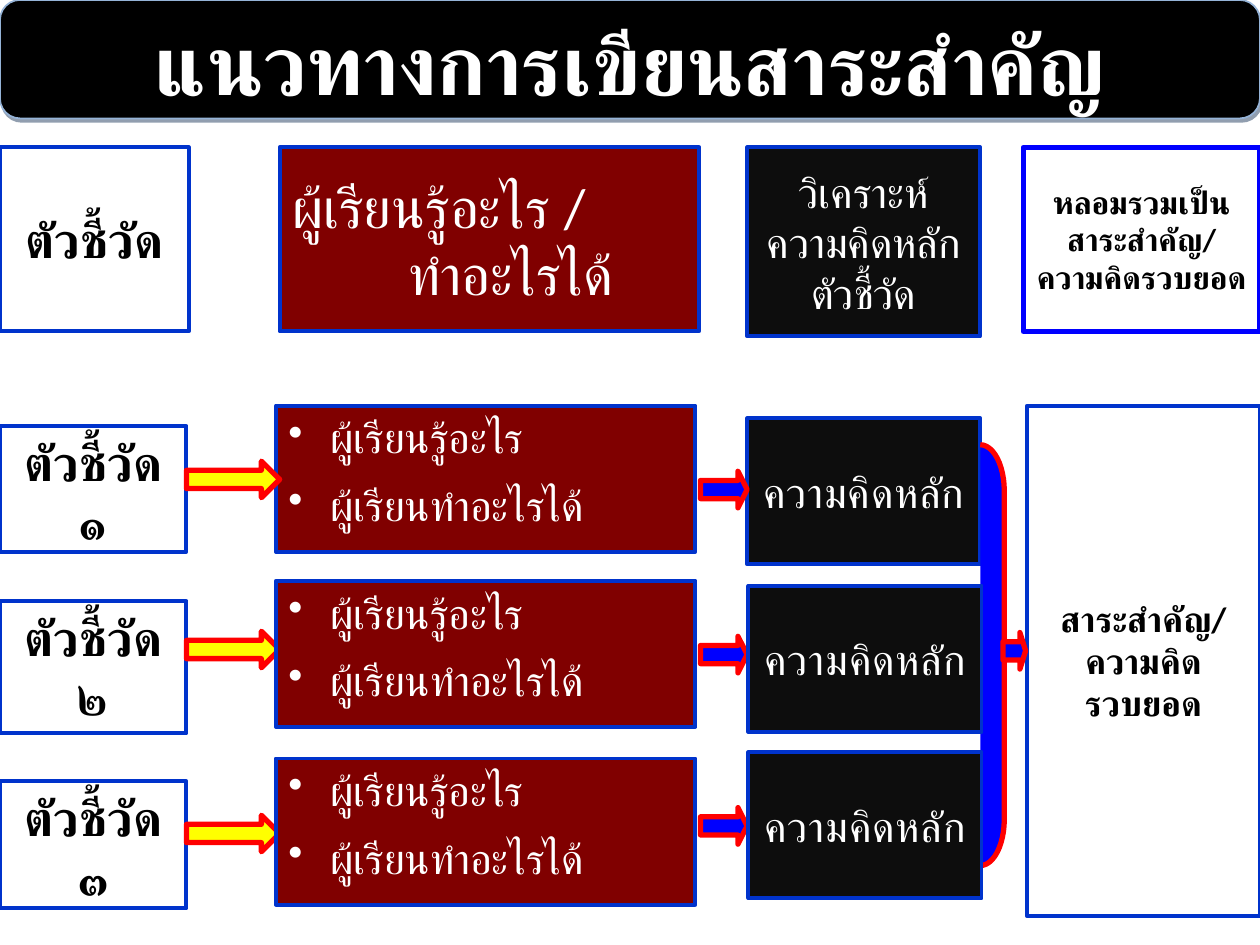
from lxml.etree import SubElement
from pptx import Presentation
from pptx.dml.color import RGBColor
from pptx.enum.shapes import MSO_SHAPE
from pptx.enum.text import MSO_ANCHOR, PP_ALIGN
from pptx.oxml import parse_xml
from pptx.oxml.ns import nsdecls, qn
from pptx.util import Inches, Pt

WHITE = RGBColor(0xFF, 0xFF, 0xFF)
BLACK = RGBColor(0, 0, 0)
DARK = RGBColor(0x0D, 0x0D, 0x0D)
MAROON = RGBColor(0x80, 0, 0)
EDGE = RGBColor(0, 0x33, 0xCC)
BLUE = RGBColor(0, 0, 0xFF)
RED = RGBColor(0xFF, 0, 0)
YELLOW = RGBColor(0xFF, 0xFF, 0)
PALE = RGBColor(0x95, 0xB3, 0xD7)


class Board:
    font = "Calibri"

    def __init__(self, slide):
        self.slide = slide

    def shape(self, kind, at, fill, line=EDGE, width=2.25, adj=()):
        item = self.slide.shapes.add_shape(kind, *map(Inches, at))
        item.shadow.inherit = False
        item.fill.solid()
        item.fill.fore_color.rgb = fill
        item.line.color.rgb = line
        item.line.width = Pt(width)
        for i, value in enumerate(adj):
            item.adjustments[i] = value
        return item

    def text(self, item, lines, size, color, bold=False, top=False,
             align=PP_ALIGN.CENTER, before=0, after=0):
        frame = item.text_frame
        frame.word_wrap = True
        frame.vertical_anchor = MSO_ANCHOR.TOP if top else MSO_ANCHOR.MIDDLE
        for i, line in enumerate(lines):
            para = frame.paragraphs[0] if i == 0 else frame.add_paragraph()
            para.text = line
            para.alignment = align
            para.space_before = Pt(before)
            para.space_after = Pt(after)
            para.font.name = self.font
            para.font.size = Pt(size)
            para.font.bold = bold
            para.font.color.rgb = color
        return frame.paragraphs

    def box(self, at, fill, lines, size, line=EDGE, width=2.25, **style):
        item = self.shape(MSO_SHAPE.RECTANGLE, at, fill, line, width)
        color = BLACK if fill == WHITE else WHITE
        return self.text(item, lines, size, color, **style)

    def indent(self, para, left, bullet=False):
        props = para._p.get_or_add_pPr()
        props.set("marL", str(Inches(left)))
        if bullet:
            props.set("indent", str(-Inches(left)))
            mark = SubElement(props, qn("a:buChar"))
            mark.set("char", "•")
            props.remove(mark)
            props.insert_element_before(mark, "a:tabLst", "a:defRPr", "a:extLst")

    def arrow(self, at, fill, head):
        self.shape(MSO_SHAPE.RIGHT_ARROW, at, fill, RED, 3, (0.5, head))

    def banner(self, text):
        item = self.shape(MSO_SHAPE.ROUNDED_RECTANGLE, (0, 0, 10, 0.94),
                          BLACK, PALE, 1, (0.17,))
        self.text(item, [text], 48, WHITE, bold=True, top=True, after=10)
        glow = item._element.spPr.find(qn("a:effectLst"))
        glow.append(parse_xml(
            f'<a:outerShdw {nsdecls("a")} dist="{Pt(2.2)}" dir="3780000">'
            '<a:srgbClr val="243F60"><a:alpha val="50000"/></a:srgbClr>'
            '</a:outerShdw>'))

    def task(self, top):
        lines = [" ผู้เรียนรู้อะไร", " ผู้เรียนทำอะไรได้"]
        for para in self.box((2.19, top, 3.33, 1.16), MAROON, lines, 24,
                             top=True, align=PP_ALIGN.LEFT, after=10):
            self.indent(para, 0.25, bullet=True)

    def idea(self, left, top):
        para = self.box((left, top, 1.85, 1.16), DARK, ["ความคิดหลัก"], 24)[0]
        para.runs[0]._r.get_or_add_rPr().set("spc", "50")


def main():
    deck = Presentation()
    deck.slide_width, deck.slide_height = Inches(10), Inches(7.5)
    board = Board(deck.slides.add_slide(deck.slide_layouts[6]))

    # Column heads
    board.box((0, 1.17, 1.5, 1.46), WHITE, ["ตัวชี้วัด"], 28,
              bold=True, before=12, after=10)
    heads = board.box((2.22, 1.17, 3.33, 1.46), MAROON,
                      ["ผู้เรียนรู้อะไร /", "ทำอะไรได้"], 32, align=PP_ALIGN.LEFT)
    board.indent(heads[1], 0.92)
    board.box((5.93, 1.17, 1.85, 1.5), DARK,
              ["วิเคราะห์ความคิดหลักตัวชี้วัด"], 24, after=10)
    board.box((8.12, 1.17, 1.88, 1.46), WHITE,
              ["หลอมรวมเป็นสาระสำคัญ/ความคิดรวบยอด"], 18, BLUE, 3, bold=True)

    # Indicators
    for digit, top, height in (("๑", 3.38, 1), ("๒", 4.77, 1.05), ("๓", 6.2, 1.01)):
        board.box((0, top, 1.48, height), WHITE, [f"ตัวชี้วัด {digit}"], 28,
                  bold=True, top=True, after=10)

    # First row and the result
    board.task(3.22)
    board.idea(5.93, 3.32)
    board.box((8.15, 3.22, 1.85, 4.05), WHITE,
              ["สาระสำคัญ/ความคิด", "รวบยอด"], 20, bold=True)

    # Arrows and bracket
    for long, short in ((3.66, 3.74), (5.01, 5.05), (6.47, 6.41)):
        board.arrow((1.48, long, 0.74, 0.29), YELLOW, 0.5)
        board.arrow((5.56, short, 0.37, 0.29), BLUE, 0.25)
    board.shape(MSO_SHAPE.RIGHT_BRACKET, (7.78, 3.53, 0.19, 3.34),
                BLUE, RED, 3, (1.91,))
    board.arrow((7.96, 5.02, 0.18, 0.29), BLUE, 0.25)

    # Title
    board.banner("แนวทางการเขียนสาระสำคัญ")

    # Other rows, above the arrows
    for task, idea in ((4.61, 4.65), (6.02, 5.97)):
        board.task(task)
        board.idea(5.94, idea)

    deck.save("out.pptx")


if __name__ == "__main__":
    main()
